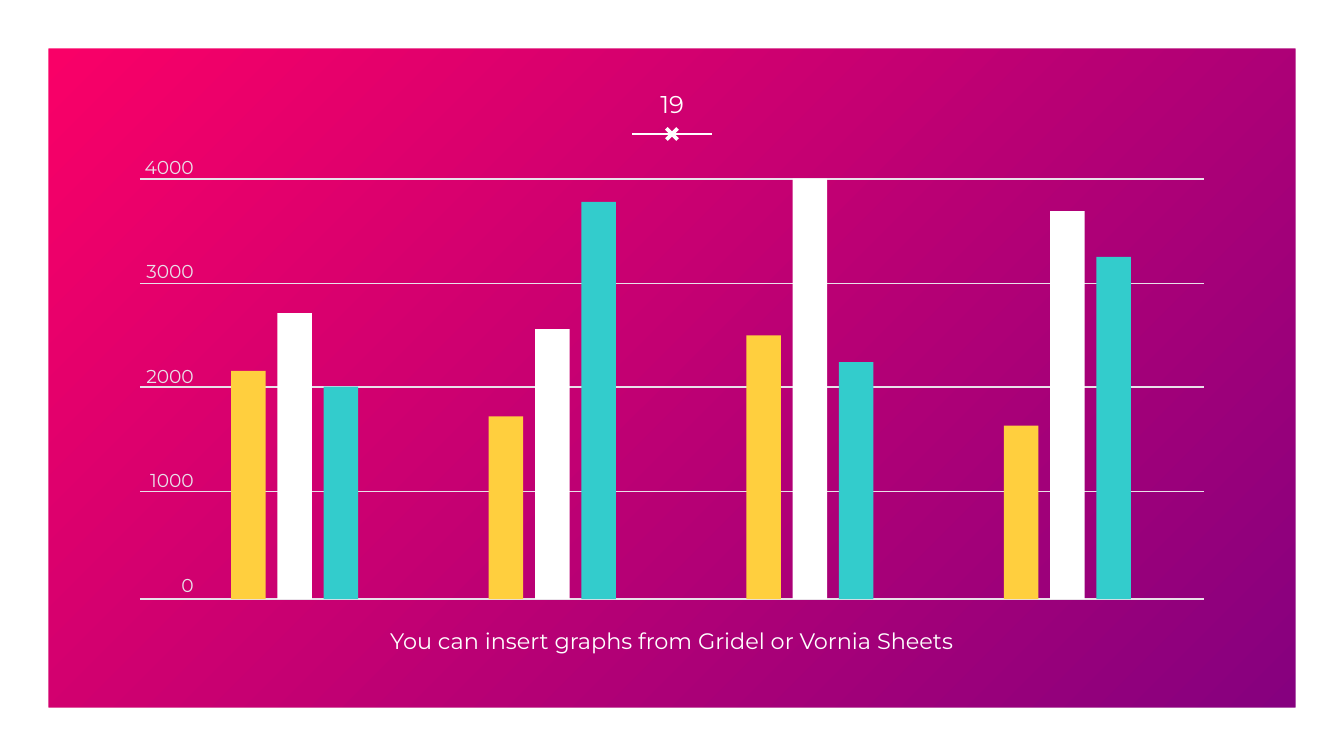
"""Build a slide with a grouped bar graph on a gradient background."""
import pptx
import pptx.dml.color
import pptx.enum.shapes
import pptx.enum.text
import pptx.oxml
import pptx.oxml.ns
import pptx.util

Pt = pptx.util.Pt
SHAPES = pptx.enum.shapes.MSO_SHAPE
ALIGN = pptx.enum.text.PP_ALIGN
ANCHOR = pptx.enum.text.MSO_ANCHOR

WHITE, GRID = "FFFFFF", "E9E0E9"
SERIES_COLOURS = ("FFCF3E", WHITE, "33CCCC")
GROUPS = (
    (2170, 2720, 2020),
    (1740, 2570, 3780),
    (2510, 4000, 2255),
    (1650, 3690, 3255),
)
TICKS = ("4000", "3000", "2000", "1000", "0")
GRID_TOPS = (96, 151.8, 207.4, 263.4, 321)
BASELINE, PLOT_HEIGHT, MAX_VALUE = 321, 225.3, 4000
FIRST_BAR, GROUP_PITCH, BAR_PITCH, BAR_WIDTH = 123.8, 138, 24.8, 18.5


def colour(code):
    """Return the colour for a hex string."""
    return pptx.dml.color.RGBColor.from_string(code)


def paint_background(page, start, end):
    """Fill the page with a diagonal two-colour gradient."""
    fill = page.background.fill
    fill.gradient()
    fill.gradient_angle = 315
    for stop, code in zip(fill.gradient_stops, (start, end)):
        stop.color.rgb = colour(code)


def add_shape(page, kind, left, top, width, height, code, adjust=None):
    """Add a plain filled shape without outline."""
    shape = page.shapes.add_shape(kind, Pt(left), Pt(top), Pt(width), Pt(height))
    shape.shadow.inherit = False
    shape.fill.solid()
    shape.fill.fore_color.rgb = colour(code)
    shape.line.fill.background()
    if adjust is not None:
        shape.adjustments[0] = adjust


def add_rule(page, left, right, top, code):
    """Add a thin horizontal line."""
    rule = page.shapes.add_connector(
        pptx.enum.shapes.MSO_CONNECTOR.STRAIGHT, Pt(left), Pt(top), Pt(right), Pt(top))
    rule.line.color.rgb = colour(code)
    rule.line.width = Pt(0.75)
    effects = pptx.oxml.parse_xml("<a:effectLst %s/>" % pptx.oxml.ns.nsdecls("a"))
    rule._element.spPr.append(effects)


def add_text(page, lines, left, top, width, height, size, code=WHITE,
             align=ALIGN.CENTER, anchor=ANCHOR.TOP, inset=7.2, first_gap=0, gap=0):
    """Add a text box with one paragraph per line."""
    box = page.shapes.add_textbox(Pt(left), Pt(top), Pt(width), Pt(height))
    frame = box.text_frame
    frame.word_wrap = True
    frame.vertical_anchor = anchor
    frame.margin_left = frame.margin_right = Pt(inset)
    frame.margin_top = frame.margin_bottom = Pt(inset)
    frame.text = "\n".join(lines)
    for index, para in enumerate(frame.paragraphs):
        para.alignment = align
        para.space_before = Pt(gap if index else first_gap)
        para.font.name = "Montserrat"
        para.font.size = Pt(size)
        para.font.color.rgb = colour(code)


def add_bars(page):
    """Draw every group of bars to the scale of the grid."""
    for group, values in enumerate(GROUPS):
        for series, value in enumerate(values):
            left = FIRST_BAR + group * GROUP_PITCH + series * BAR_PITCH
            height = value / MAX_VALUE * PLOT_HEIGHT
            add_shape(page, SHAPES.RECTANGLE, left, BASELINE - height,
                      BAR_WIDTH, height, SERIES_COLOURS[series])


def main():
    """Build and save the deck."""
    deck = pptx.Presentation()
    deck.slide_width, deck.slide_height = Pt(720), Pt(405)
    page = deck.slides.add_slide(deck.slide_layouts[6])
    paint_background(page, "FF0066", "800080")
    add_shape(page, SHAPES.FRAME, 0, 0, 720, 405, WHITE, 0.064)
    add_rule(page, 338.5, 381.5, 71.8, WHITE)
    add_shape(page, SHAPES.MATH_MULTIPLY, 354.2, 66, 11.6, 11.6, WHITE, 0.174)
    add_text(page, ["You can insert graphs from Gridel or Vornia Sheets"],
             36, 329, 648, 41, 12, first_gap=3.6)
    add_text(page, ["19"], 338.5, 40.3, 43, 31, 13, anchor=ANCHOR.MIDDLE)
    for top in GRID_TOPS:
        add_rule(page, 75, 645, top, GRID)
    add_text(page, TICKS, 75, 83.3, 28.8, 238, 10, GRID, ALIGN.RIGHT, inset=0, gap=44)
    add_bars(page)
    deck.save("out.pptx")


if __name__ == "__main__":
    main()
